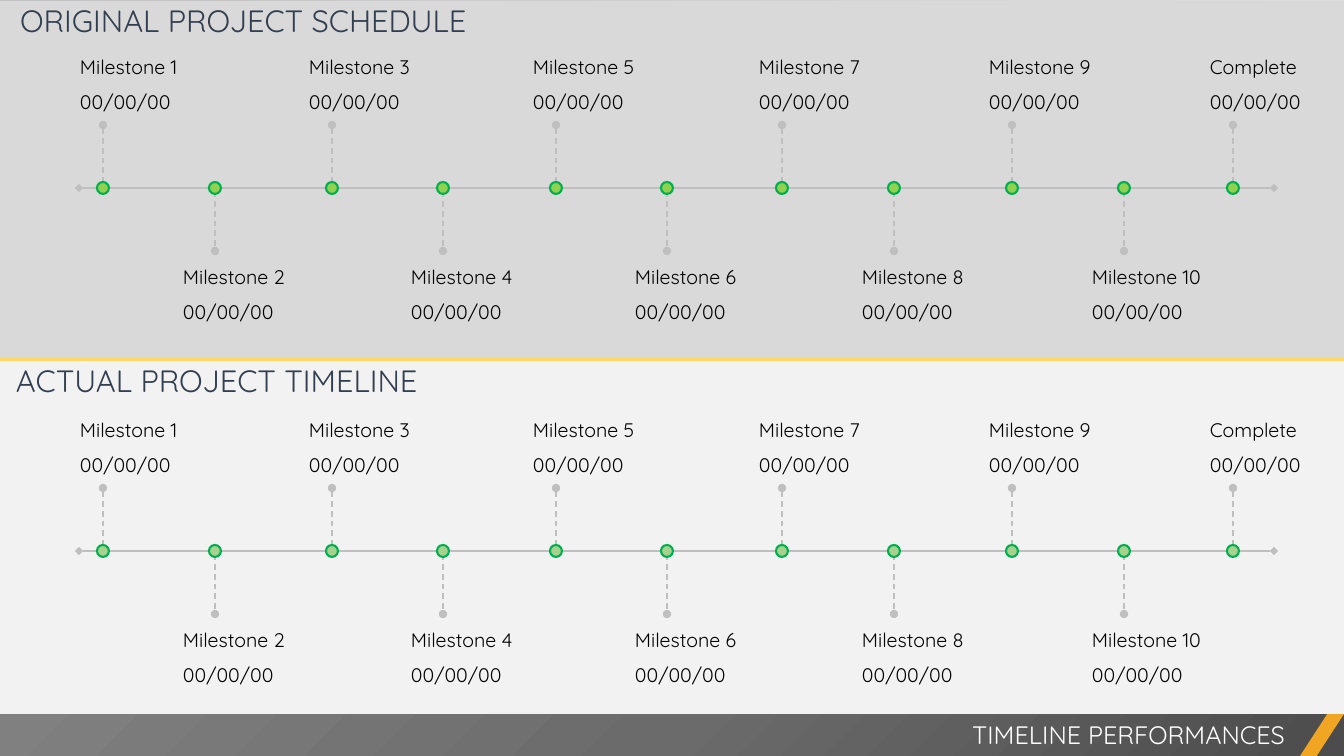
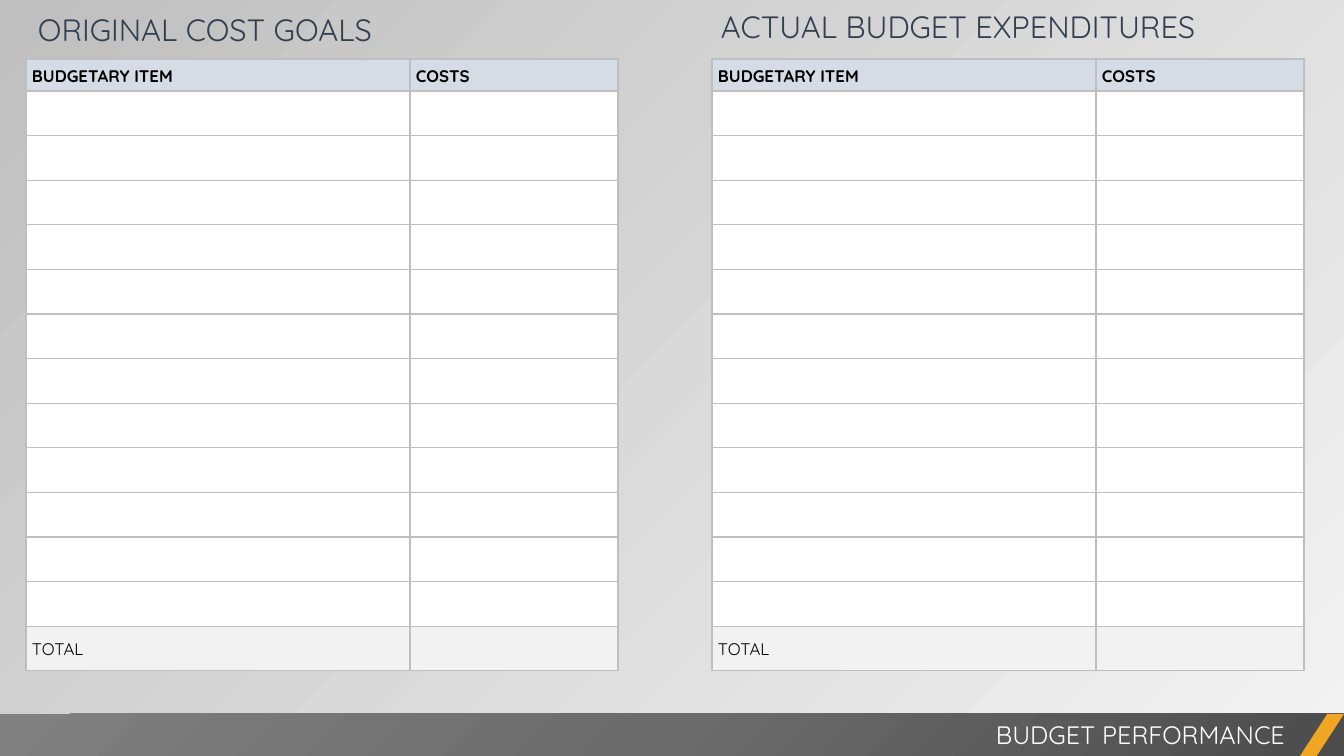
from dataclasses import dataclass

from lxml.etree import SubElement
from pptx import Presentation
from pptx.dml.color import RGBColor
from pptx.enum.dml import MSO_LINE
from pptx.enum.shapes import MSO_CONNECTOR, MSO_SHAPE
from pptx.enum.text import MSO_ANCHOR, PP_ALIGN
from pptx.oxml import parse_xml
from pptx.oxml.ns import nsdecls, qn
from pptx.util import Pt

SLIDE_WIDTH, SLIDE_HEIGHT = 1344, 756
EMU_PER_PX = 12192000 / SLIDE_WIDTH
FOOTER_TOP = 714
FOOTER_HEIGHT = SLIDE_HEIGHT - FOOTER_TOP


def px(length):
    return round(length * EMU_PER_PX)


@dataclass(frozen=True)
class Theme:
    font: str = "Quicksand"
    title_size: float = 22
    title_line: float = 21.5
    footer_size: float = 18
    label_size: float = 14
    table_size: float = 12
    title: str = "333F50"
    text: str = "000000"
    white: str = "FFFFFF"
    light: str = "F2F2F2"
    panel: str = "D9D9D9"
    rule: str = "BFBFBF"
    header: str = "D6DCE5"
    divider: str = "FFD966"
    accent: str = "F0A622"
    marker_line: str = "00B050"
    planned: str = "92D050"
    actual: str = "A9D18E"
    footer: tuple = ((0, "4C4C4C"), (50, "6B6B6B"), (100, "808080"))


class Deck:
    def __init__(self, theme):
        self.theme = theme
        self.presentation = Presentation()
        self.presentation.slide_width = px(SLIDE_WIDTH)
        self.presentation.slide_height = px(SLIDE_HEIGHT)
        self.slide = None

    def new_slide(self, footer):
        theme = self.theme
        self.slide = self.presentation.slides.add_slide(self.presentation.slide_layouts[6])
        fill = self.slide.background.fill
        fill.gradient()
        fill.gradient_angle = 135
        for stop, color in zip(fill.gradient_stops, (theme.light, theme.rule)):
            stop.color.rgb = RGBColor.from_string(color)

        bar = self.shape(MSO_SHAPE.RECTANGLE, 0, FOOTER_TOP, SLIDE_WIDTH, FOOTER_HEIGHT, theme.rule)
        self.corner_gradient(bar, theme.footer)
        slash = self.shape(MSO_SHAPE.PARALLELOGRAM, 1300, FOOTER_TOP, 44, FOOTER_HEIGHT, theme.accent)
        slash.adjustments[0] = 0.65
        self.text(529, FOOTER_TOP, 766, 40, [footer], theme.footer_size, theme.white,
                  align=PP_ALIGN.RIGHT)

    def corner_gradient(self, shape, stops):
        stop_xml = "".join(
            f'<a:gs pos="{position * 1000}"><a:srgbClr val="{color}"/></a:gs>'
            for position, color in stops)
        gradient = parse_xml(
            f'<a:gradFill {nsdecls("a")} rotWithShape="1"><a:gsLst>{stop_xml}</a:gsLst>'
            '<a:path path="circle"><a:fillToRect l="100000" t="100000"/></a:path></a:gradFill>')
        properties = shape._element.spPr
        properties.replace(properties.find(qn("a:solidFill")), gradient)

    def shape(self, kind, left, top, width, height, fill, line=None, line_width=1.5):
        shape = self.slide.shapes.add_shape(kind, px(left), px(top), px(width), px(height))
        shape.shadow.inherit = False
        shape.fill.solid()
        shape.fill.fore_color.rgb = RGBColor.from_string(fill)
        if line:
            shape.line.color.rgb = RGBColor.from_string(line)
            shape.line.width = Pt(line_width)
        else:
            shape.line.fill.background()
        return shape

    def line(self, start, end, color, width, ends=None, dashed=False):
        connector = self.slide.shapes.add_connector(
            MSO_CONNECTOR.STRAIGHT, *(px(value) for value in (*start, *end)))
        connector.line.color.rgb = RGBColor.from_string(color)
        connector.line.width = Pt(width)
        if dashed:
            connector.line.dash_style = MSO_LINE.DASH
        properties = connector._element.spPr
        if ends:
            for tag in ("a:headEnd", "a:tailEnd"):
                SubElement(properties.find(qn("a:ln")), qn(tag), type=ends)
        SubElement(properties, qn("a:effectLst"))

    def run(self, paragraph, text, size, color, bold=False):
        run = paragraph.add_run()
        run.text = text
        run.font.name = self.theme.font
        run.font.size = Pt(size)
        run.font.bold = bold
        run.font.color.rgb = RGBColor.from_string(color)

    def text(self, left, top, width, height, lines, size, color,
             align=PP_ALIGN.LEFT, space_after=0, line_spacing=None, insets=(10, 5)):
        box = self.slide.shapes.add_textbox(px(left), px(top), px(width), px(height))
        frame = box.text_frame
        frame.word_wrap = True
        frame.margin_left = frame.margin_right = px(insets[0])
        frame.margin_top = frame.margin_bottom = px(insets[1])
        for index, line in enumerate(lines):
            paragraph = frame.add_paragraph() if index else frame.paragraphs[0]
            paragraph.alignment = align
            paragraph.space_after = Pt(space_after)
            if line_spacing:
                paragraph.line_spacing = Pt(line_spacing)
            self.run(paragraph, line, size, color)

    def title(self, left, top, text):
        self.text(left, top, 560, 43, [text], self.theme.title_size, self.theme.title,
                  line_spacing=self.theme.title_line, insets=(12, 6))

    def timeline(self, top, stems, labels, marker_color):
        theme = self.theme
        axis = top + 188
        stem_length = 63
        self.line((79, axis), (1274, axis), theme.rule, 1.5, "diamond")
        for index, (x, label) in enumerate(zip(stems, labels)):
            below = index % 2
            tip = axis + stem_length if below else axis - stem_length
            self.line((x, min(tip, axis)), (x, max(tip, axis)), theme.rule, 1, "oval", dashed=True)
            self.shape(MSO_SHAPE.OVAL, x - 6, axis - 6, 12, 12, marker_color, theme.marker_line)
            label_left, label_top = (x - 42, top + 260) if below else (x - 33, top + 50)
            self.text(label_left, label_top, 192, 64, [label, "00/00/00"],
                      theme.label_size, theme.text, space_after=8)

    def cell(self, cell, text, fill, bold):
        theme = self.theme
        properties = cell._tc.get_or_add_tcPr()
        for side in "LRTB":
            properties.append(parse_xml(
                f'<a:ln{side} {nsdecls("a")} w="{Pt(1)}"><a:solidFill>'
                f'<a:srgbClr val="{theme.rule}"/></a:solidFill></a:ln{side}>'))
        cell.fill.solid()
        cell.fill.fore_color.rgb = RGBColor.from_string(fill)
        cell.vertical_anchor = MSO_ANCHOR.MIDDLE
        cell.margin_left = cell.margin_right = px(6)
        cell.margin_top = cell.margin_bottom = 0
        if text:
            paragraph = cell.text_frame.paragraphs[0]
            paragraph.line_spacing = 1.07
            self.run(paragraph, text, theme.table_size, theme.text, bold)

    def budget_table(self, left, top, item_rows):
        theme = self.theme
        widths, height, header_height = (384, 208), 612, 32
        rows = [(("BUDGETARY ITEM", "COSTS"), theme.header)]
        rows += [(("", ""), theme.white)] * item_rows
        rows += [(("TOTAL", ""), theme.light)]
        frame = self.slide.shapes.add_table(
            len(rows), len(widths), px(left), px(top), px(sum(widths)), px(height))
        table = frame.table
        table.first_row = table.horz_banding = False
        for column, width in zip(table.columns, widths):
            column.width = px(width)
        body_height = px(height - header_height) // (len(rows) - 1)
        for index, (row, (texts, fill)) in enumerate(zip(table.rows, rows)):
            row.height = body_height if index else px(header_height)
            for cell, text in zip(row.cells, texts):
                self.cell(cell, text, fill, bold=index == 0)


def timeline_slide(deck):
    theme = deck.theme
    divider = 359
    stems = (103, 215, 332, 443, 556, 667, 782, 894, 1012, 1124, 1233)
    labels = [f"Milestone {number}" for number in range(1, len(stems))] + ["Complete"]
    deck.new_slide("TIMELINE PERFORMANCES")
    panels = (
        (1, divider, theme.panel, 0, 8, 3, "ORIGINAL PROJECT SCHEDULE", theme.planned),
        (divider, FOOTER_TOP, theme.light, 363, 4, 363, "ACTUAL PROJECT TIMELINE", theme.actual),
    )
    for top, bottom, fill, offset, title_left, title_top, title, marker_color in panels:
        deck.shape(MSO_SHAPE.RECTANGLE, 0, top, SLIDE_WIDTH, bottom - top, fill)
        deck.timeline(offset, stems, labels, marker_color)
        deck.title(title_left, title_top, title)
    deck.line((0, divider), (SLIDE_WIDTH, divider), theme.divider, 2.25)


def budget_slide(deck):
    deck.new_slide("BUDGET PERFORMANCE")
    for table_left, title_left, title_top, title in (
        (26, 26, 12, "ORIGINAL COST GOALS"),
        (712, 709, 9, "ACTUAL BUDGET EXPENDITURES"),
    ):
        deck.title(title_left, title_top, title)
        deck.budget_table(table_left, 59, item_rows=12)


def main():
    deck = Deck(Theme())
    timeline_slide(deck)
    budget_slide(deck)
    deck.presentation.save("out.pptx")


if __name__ == "__main__":
    main()
